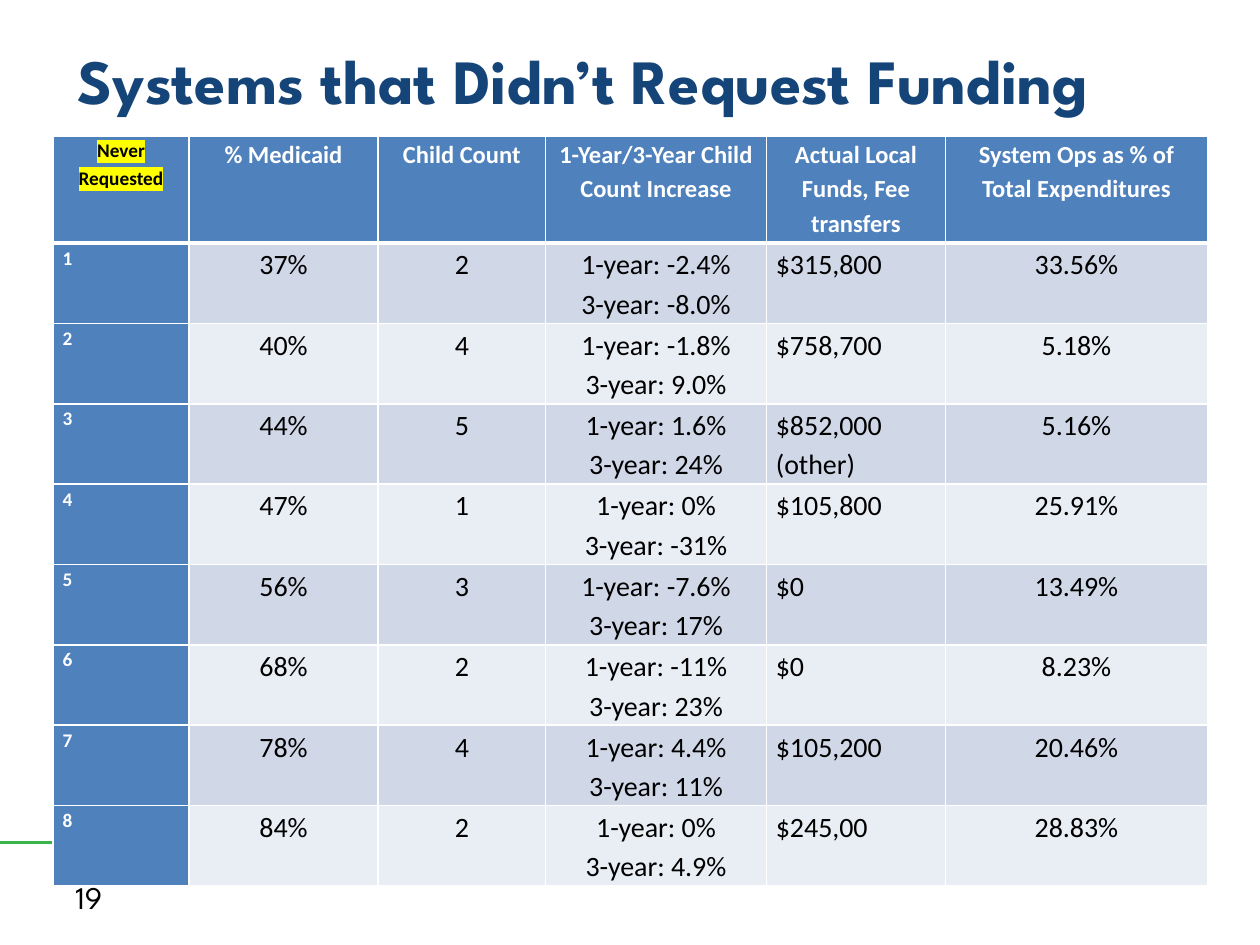
import pptx
import pptx.dml.color
import pptx.enum.shapes
import pptx.enum.text
import pptx.oxml
import pptx.oxml.ns
import pptx.util
import lxml.etree

Cm = pptx.util.Cm
Pt = pptx.util.Pt
ALIGN = pptx.enum.text.PP_ALIGN
qn = pptx.oxml.ns.qn

HEADINGS = [
    "Never Requested",
    "% Medicaid",
    "Child Count",
    "1-Year/3-Year Child Count Increase",
    "Actual Local Funds, Fee transfers",
    "System Ops as % of Total Expenditures",
]
SYSTEMS = [
    ("37%", "2", "-2.4%", "-8.0%", "$315,800", "33.56%"),
    ("40%", "4", "-1.8%", "9.0%", "$758,700", "5.18%"),
    ("44%", "5", "1.6%", "24%", "$852,000 (other)", "5.16%"),
    ("47%", "1", "0%", "-31%", "$105,800", "25.91%"),
    ("56%", "3", "-7.6%", "17%", "$0", "13.49%"),
    ("68%", "2", "-11%", "23%", "$0", "8.23%"),
    ("78%", "4", "4.4%", "11%", "$105,200", "20.46%"),
    ("84%", "2", "0%", "4.9%", "$245,00", "28.83%"),
]
COLUMN_WIDTHS = [2.74, 3.81, 3.38, 4.45, 3.61, 5.28]
HEADER_HEIGHT = 2.16
ROW_HEIGHT = 1.62
FUNDS_COLUMN = 4
HEADER_BLUE = "4F81BD"
BANDS = ["D0D8E8", "E9EDF4"]
WHITE = "FFFFFF"
BLACK = "000000"


def rgb(value):
    return pptx.dml.color.RGBColor.from_string(value)


def style_paragraph(paragraph, size, color, bold=False, font="Calibri", align=ALIGN.LEFT):
    paragraph.alignment = align
    for run in paragraph.runs:
        run.font.size = Pt(size)
        run.font.name = font
        run.font.bold = bold
        run.font.color.rgb = rgb(color)


def add_label(slide, text, left, top, width, height, size, color, bold=False):
    label = slide.shapes.add_textbox(Cm(left), Cm(top), Cm(width), Cm(height))
    frame = label.text_frame
    frame.word_wrap = True
    frame.vertical_anchor = pptx.enum.text.MSO_ANCHOR.MIDDLE
    frame.text = text
    style_paragraph(frame.paragraphs[0], size, color, bold, "League Spartan")


def add_rule(slide, left, right, y, color, weight):
    rule = slide.shapes.add_connector(
        pptx.enum.shapes.MSO_CONNECTOR.STRAIGHT, Cm(left), Cm(y), Cm(right), Cm(y))
    rule.line.color.rgb = rgb(color)
    rule.line.width = Pt(weight)
    lxml.etree.SubElement(rule._element.spPr, qn("a:effectLst"))


def highlight(run, color):
    mark = pptx.oxml.parse_xml(
        f'<a:highlight {pptx.oxml.ns.nsdecls("a")}><a:srgbClr val="{color}"/></a:highlight>')
    run.font._element.find(qn("a:solidFill")).addnext(mark)


def set_borders(cell, top, bottom):
    weights = {"lnL": 1, "lnR": 1, "lnT": top, "lnB": bottom}
    properties = cell._tc.get_or_add_tcPr()
    for position, (side, weight) in enumerate(weights.items()):
        border = pptx.oxml.parse_xml(
            f'<a:{side} {pptx.oxml.ns.nsdecls("a")} w="{Pt(weight)}">'
            f'<a:solidFill><a:srgbClr val="{WHITE}"/></a:solidFill></a:{side}>')
        properties.insert(position, border)


def fill_cell(cell, text, fill, size, color, bold, align):
    cell.margin_left = cell.margin_right = Cm(0.19)
    cell.margin_top = cell.margin_bottom = 0
    cell.fill.solid()
    cell.fill.fore_color.rgb = rgb(fill)
    cell.text_frame.text = text
    for paragraph in cell.text_frame.paragraphs:
        paragraph.line_spacing = 1.15
        style_paragraph(paragraph, size, color, bold, align=align)


def add_systems_table(slide, left, top):
    table = slide.shapes.add_table(
        len(SYSTEMS) + 1, len(HEADINGS), Cm(left), Cm(top), Cm(sum(COLUMN_WIDTHS)),
        Cm(HEADER_HEIGHT + ROW_HEIGHT * len(SYSTEMS))).table
    for column, width in zip(table.columns, COLUMN_WIDTHS):
        column.width = Cm(width)
    for index, row in enumerate(table.rows):
        row.height = Cm(ROW_HEIGHT if index else HEADER_HEIGHT)

    for column, heading in enumerate(HEADINGS):
        cell = table.cell(0, column)
        size, color = (14, WHITE) if column else (11, BLACK)
        fill_cell(cell, heading, HEADER_BLUE, size, color, True, ALIGN.CENTER)
        set_borders(cell, 1, 3)
    highlight(table.cell(0, 0).text_frame.paragraphs[0].runs[0], "FFFF00")

    for number, system in enumerate(SYSTEMS, start=1):
        medicaid, children, one_year, three_year, funds, operations = system
        increase = f"1-year: {one_year}\n3-year: {three_year}"
        values = [str(number), medicaid, children, increase, funds, operations]
        band = BANDS[(number - 1) % 2]
        for column, value in enumerate(values):
            cell = table.cell(number, column)
            if column == 0:
                fill_cell(cell, value, HEADER_BLUE, 11, WHITE, True, ALIGN.LEFT)
            else:
                align = ALIGN.LEFT if column == FUNDS_COLUMN else ALIGN.CENTER
                fill_cell(cell, value, band, 16, BLACK, False, align)
            set_borders(cell, 3 if number == 1 else 1, 1)


def main():
    deck = pptx.Presentation()
    deck.slide_width = Cm(25.4)
    deck.slide_height = Cm(19.05)
    slide = deck.slides.add_slide(deck.slide_layouts[6])
    add_rule(slide, 0, 20.75, 16.99, "39B54A", 1.5)
    add_label(slide, "19", 1.27, 17.58, 5.92, 1.02, 18, BLACK)
    add_label(slide, "Systems that Didn’t Request Funding",
              1.32, 0.43, 22.86, 2.34, 36, "154578", True)
    add_systems_table(slide, 1.07, 2.74)
    deck.save("out.pptx")


if __name__ == "__main__":
    main()
